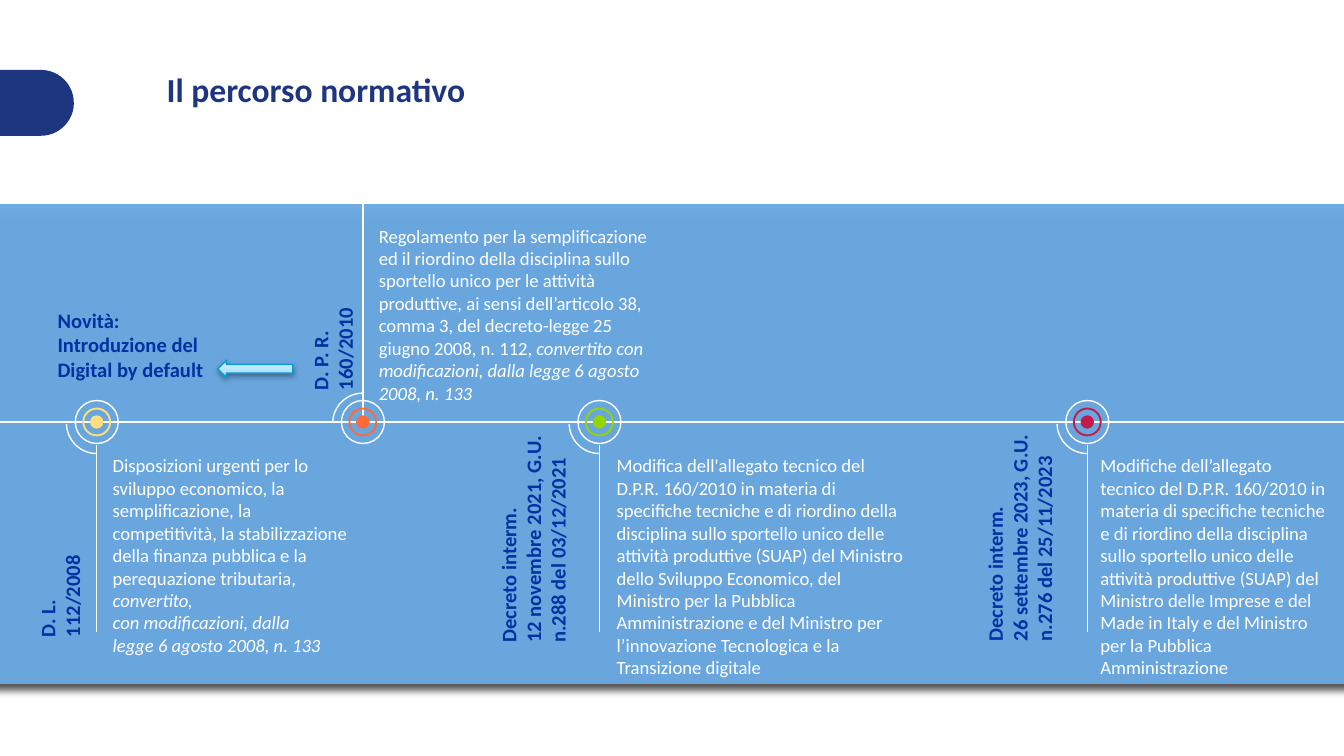
from dataclasses import dataclass
from lxml.etree import SubElement
from pptx import Presentation
from pptx.dml.color import RGBColor as Rgb
from pptx.enum.shapes import MSO_CONNECTOR as Conn, MSO_SHAPE as Kind
from pptx.enum.text import MSO_ANCHOR as Anchor, PP_ALIGN as Align
from pptx.oxml import parse_xml
from pptx.oxml.ns import nsdecls, qn
from pptx.util import Inches, Pt

HUE = {
    "white": "FFFFFF", "navy": "1E3680", "label": "0032A1", "band": "6AAAE4",
    "yellow": "FFDF7D", "orange": "FF6B37", "green": "92D600", "red": "C31B4A",
    "edge": "099CD4", "black": "000000",
}
GLOW = ((0, "89DAFF"), (35, "ADE4FF"), (100, "DEF3FF"))
WIDE = 10
AXIS = 3.14


@dataclass
class Stop:
    x: float
    hue: str
    label: list[str]
    tag: tuple[float, float, float, float]
    body: list[str]
    box: tuple[float, float, float, float]
    above: bool = False


STOPS = [
    Stop(0.72, "yellow", ["D. L.", "112/2008"], (-0.42, 3.78, 1.64, 0.48),
         ["Disposizioni urgenti per lo sviluppo economico, la semplificazione, "
          "la competitività, la stabilizzazione della finanza pubblica e la "
          "perequazione tributaria, *convertito,*",
          "*con modificazioni, dalla*", "*legge 6 agosto 2008, n. 133*"],
         (0.74, 3.28, 1.95, 1.56)),
    Stop(2.7, "orange", ["D. P. R.", "160/2010"], (1.93, 2.23, 1.03, 0.51),
         ["Regolamento per la semplificazione ed il riordino della disciplina "
          "sullo sportello unico per le attività produttive, ai sensi "
          "dell’articolo 38, comma 3, del decreto-legge 25 giugno 2008, n. 112, "
          "*convertito con modificazioni, dalla legge 6 agosto 2008, n. 133*"],
         (2.72, 1.57, 2.28, 1.4), True),
    Stop(4.46, "green",
         ["Decreto interm.", "12 novembre 2021, G.U. n.288 del 03/12/2021"],
         (3.02, 3.71, 1.74, 0.6),
         ["Modifica dell'allegato tecnico del D.P.R. 160/2010 in materia di "
          "specifiche tecniche e di riordino della disciplina sullo sportello "
          "unico delle attività produttive (SUAP) del Ministro dello Sviluppo "
          "Economico, del Ministro per la Pubblica Amministrazione e del "
          "Ministro per l’innovazione Tecnologica e la Transizione digitale"],
         (4.49, 3.28, 2.37, 1.56)),
    Stop(8.09, "red",
         ["Decreto interm.", "26 settembre 2023, G.U. n.276 del 25/11/2023"],
         (6.61, 3.73, 1.74, 0.54),
         ["Modifiche dell’allegato tecnico del D.P.R. 160/2010 in materia di "
          "specifiche tecniche e di riordino della disciplina sullo sportello "
          "unico delle attività produttive (SUAP) del Ministro delle Imprese e "
          "del Made in Italy e del Ministro per la Pubblica Amministrazione"],
         (8.09, 3.28, 1.9, 1.48)),
]


def write(shape, paras: list[str], *, size: float, hue: str,
          bold: bool = False, pad: float = 0.1) -> None:
    frame = shape.text_frame
    frame.word_wrap = True
    frame.vertical_anchor = Anchor.TOP
    frame.margin_left = frame.margin_right = Inches(0.1)
    frame.margin_top = frame.margin_bottom = Inches(pad)
    for i, text in enumerate(paras):
        para = frame.add_paragraph() if i else frame.paragraphs[0]
        para.alignment = Align.LEFT
        for j, part in enumerate(text.split("*")):
            if part:
                run = para.add_run()
                run.text = part
                font = run.font
                font.name, font.size, font.bold = "Calibri", Pt(size), bold
                font.italic = j % 2 == 1
                font.color.rgb = Rgb.from_string(HUE[hue])


def label(slide, at: tuple, paras: list[str], turn: float = 0, **form) -> None:
    box = slide.shapes.add_textbox(*map(Inches, at))
    box.rotation = turn
    write(box, paras, **form)


def draw(slide, kind, at: tuple, fill: str = "", line: str = "",
         width: float = 0.75, adj: tuple = ()):
    shape = slide.shapes.add_shape(kind, *map(Inches, at))
    shape.shadow.inherit = False
    for i, value in enumerate(adj):
        shape.adjustments[i] = value
    if fill:
        shape.fill.solid()
        shape.fill.fore_color.rgb = Rgb.from_string(HUE[fill])
    else:
        shape.fill.background()
    if line:
        shape.line.color.rgb = Rgb.from_string(HUE[line])
        shape.line.width = Pt(width)
    else:
        shape.line.fill.background()
    return shape


def rule(slide, x1: float, y1: float, x2: float, y2: float) -> None:
    line = slide.shapes.add_connector(
        Conn.STRAIGHT, *map(Inches, (x1, y1, x2, y2)))
    line.line.color.rgb = Rgb.from_string(HUE["white"])
    line.line.width = Pt(0.75)
    SubElement(line._element.spPr, qn("a:effectLst"))


def shade(shape, alpha: int, blur: float, dist: float) -> None:
    cast = SubElement(
        shape._element.spPr.find(qn("a:effectLst")), qn("a:outerShdw"),
        blurRad=str(Pt(blur)), dist=str(Pt(dist)), dir="5400000",
        rotWithShape="0")
    tint = SubElement(cast, qn("a:srgbClr"), val=HUE["black"])
    SubElement(tint, qn("a:alpha"), val=str(alpha * 1000))


def blend(shape, stops: tuple) -> None:
    marks = "".join(f'<a:gs pos="{pos * 1000}"><a:srgbClr val="{hue}"/></a:gs>'
                    for pos, hue in stops)
    grad = parse_xml(f'<a:gradFill {nsdecls("a")}><a:gsLst>{marks}</a:gsLst>'
                     '<a:lin ang="16200000" scaled="0"/></a:gradFill>')
    props = shape._element.spPr
    props.replace(props.find(qn("a:solidFill")), grad)


def ring(slide, kind, x: float, y: float, size: float, **form) -> None:
    draw(slide, kind, (x - size / 2, y - size / 2, size, size), **form)


def mark(slide, stop: Stop) -> None:
    ends = (1.46, 3.1) if stop.above else (3.31, 4.7)
    rule(slide, stop.x, ends[0], stop.x, ends[1])
    ring(slide, Kind.OVAL, stop.x, AXIS, 0.1, fill=stop.hue)
    ring(slide, Kind.OVAL, stop.x, AXIS, 0.2, line=stop.hue, width=1)
    ring(slide, Kind.OVAL, stop.x, AXIS, 0.32, line="white")
    turn = (108.76, 162.95) if stop.above else (54.69, 107.16)
    ring(slide, Kind.ARC, stop.x, AXIS + 0.01, 0.45, line="white", adj=turn)
    label(slide, stop.box, stop.body, size=10, hue="white")
    label(slide, stop.tag, stop.label, 270, size=11, hue="label", bold=True)


def main() -> None:
    deck = Presentation()
    deck.slide_width, deck.slide_height = Inches(WIDE), Inches(WIDE * 9 / 16)
    slide = deck.slides.add_slide(deck.slide_layouts[5])
    title = slide.shapes.title
    title.left, title.top, title.width, title.height = map(
        Inches, (1.14, 0.41, 6.49, 0.5))
    write(title, ["Il percorso normativo"], size=18, hue="navy", bold=True)

    band = draw(slide, Kind.RECTANGLE, (-0.05, 1.52, 10.17, 3.57), fill="band")
    tint = next(band._element.spPr.iter(qn("a:srgbClr")))
    SubElement(tint, qn("a:alpha"), val="96000")
    shade(band, 69, 4, 4)

    for x1, x2 in ((-0.12, 0.72), (0.77, 2.65), (2.69, 10.03)):
        rule(slide, x1, AXIS, x2, AXIS)
    for stop in STOPS:
        mark(slide, stop)

    label(slide, (0.33, 2.24, 1.37, 0.66),
          ["Novità: Introduzione del Digital by default"],
          size=11, hue="label", bold=True, pad=0.05)
    arrow = draw(slide, Kind.LEFT_ARROW, (1.62, 2.68, 0.56, 0.13),
                 fill="white", line="edge", adj=(0.5, 0.5))
    blend(arrow, GLOW)
    shade(arrow, 37, 3.1, 1.6)
    draw(slide, Kind.ROUNDED_RECTANGLE, (-0.41, 0.52, 0.96, 0.49),
         fill="navy", adj=(0.5,))
    deck.save("out.pptx")


if __name__ == "__main__":
    main()
